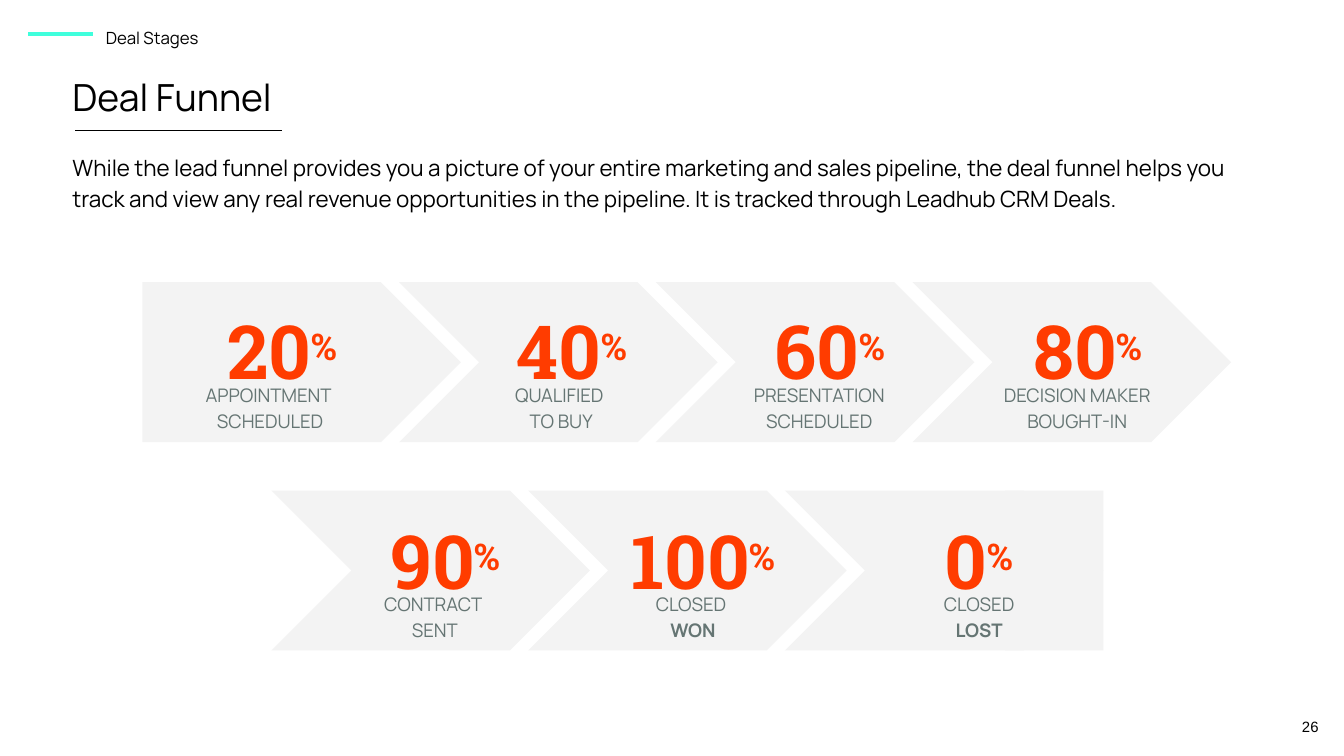
from pptx import Presentation
from pptx.dml.color import RGBColor
from pptx.enum.shapes import MSO_CONNECTOR, MSO_SHAPE
from pptx.enum.text import MSO_ANCHOR, PP_ALIGN
from pptx.oxml.ns import qn
from pptx.util import Inches, Pt
from lxml import etree

LEFT, CENTER, RIGHT = PP_ALIGN.LEFT, PP_ALIGN.CENTER, PP_ALIGN.RIGHT
TOP, MIDDLE = MSO_ANCHOR.TOP, MSO_ANCHOR.MIDDLE
PENTAGON, CHEVRON = MSO_SHAPE.PENTAGON, MSO_SHAPE.CHEVRON
RECTANGLE = MSO_SHAPE.RECTANGLE
STRAIGHT = MSO_CONNECTOR.STRAIGHT

rgb = RGBColor.from_string

# Widescreen slide, 16:9
prs = Presentation()
prs.slide_width = Inches(10)
prs.slide_height = Inches(10) * 9 // 16
slide = prs.slides.add_slide(prs.slide_layouts[6])


def add_text(left, top, width, height, text, size, color="000000",
             font="Manrope", align=LEFT, spacing=1.15, anchor=TOP):
    """Add a one-paragraph text box and return its paragraph."""
    frame = slide.shapes.add_textbox(
        Inches(left), Inches(top), Inches(width), Inches(height)).text_frame
    frame.word_wrap = True
    frame.vertical_anchor = anchor
    frame.margin_left = frame.margin_right = Inches(0.1)
    frame.margin_top = frame.margin_bottom = Inches(0.1)
    paragraph = frame.paragraphs[0]
    paragraph.text = text
    paragraph.alignment = align
    paragraph.line_spacing = spacing
    paragraph.font.size = Pt(size)
    paragraph.font.name = font
    paragraph.font.color.rgb = rgb(color)
    return paragraph


def add_block(kind, left, top, width, height):
    """Add a plain grey block of the funnel."""
    block = slide.shapes.add_shape(
        kind, Inches(left), Inches(top), Inches(width), Inches(height))
    block.shadow.inherit = False
    block.fill.solid()
    block.fill.fore_color.rgb = rgb("F3F3F3")
    block.line.fill.background()


# Header, title and introduction
add_text(0.69, 0.1, 4.03, 0.32, "Deal Stages", 9)
add_text(0.44, 0.45, 2.37, 0.43, "Deal Funnel", 20, spacing=1.0)
intro = add_text(
    0.44, 1.02, 8.93, 0.67,
    "While the lead funnel provides you a picture of your entire marketing "
    "and sales pipeline, the deal funnel helps you track and view any real "
    "revenue opportunities in the pipeline. It is tracked through Leadhub "
    "CRM Deals.", 12)
intro.space_after = Pt(16)

# Accent bar and title underline
for start, end, y, color, weight in [(0.21, 0.69, 0.25, "3FFFDC", 2.25),
                                     (0.56, 2.1, 0.97, "000000", 0.75)]:
    rule = slide.shapes.add_connector(
        STRAIGHT, Inches(start), Inches(y), Inches(end), Inches(y))
    rule.line.color.rgb = rgb(color)
    rule.line.width = Pt(weight)
    etree.SubElement(rule._element.spPr, qn("a:effectLst"))

# Rows: left, top, label top, stages
# Stages: kind, label left, label width, figure left, figure, label, outcome
rows = [
    (1.06, 2.1, 2.73, [
        (PENTAGON, 1.06, 1.9, 1.15, "20", "APPOINTMENT \vSCHEDULED", ""),
        (CHEVRON, 3.32, 1.71, 3.4, "40", "QUALIFIED \vTO BUY", ""),
        (CHEVRON, 5.24, 1.71, 5.32, "60", "PRESENTATION SCHEDULED", ""),
        (CHEVRON, 7.16, 1.71, 7.24, "80", "DECISION MAKER BOUGHT-IN", ""),
    ]),
    (2.02, 3.65, 4.29, [
        (CHEVRON, 2.38, 1.71, 2.46, "90", "CONTRACT \vSENT", ""),
        (CHEVRON, 4.3, 1.71, 4.38, "100", "CLOSED \v", "WON"),
        (CHEVRON, 6.43, 1.71, 6.43, "0", "CLOSED\v", "LOST"),
    ]),
]
STAGE_WIDTH, STAGE_HEIGHT, STAGE_STEP = 2.37, 1.19, 1.91

# Square end of the last stage
add_block(RECTANGLE, 7.48, 3.65, 0.73, STAGE_HEIGHT)

for row_left, row_top, label_top, stages in rows:
    for i, (kind, label_left, width, figure_left, figure, label,
            outcome) in enumerate(stages):
        add_block(kind, row_left + i * STAGE_STEP, row_top,
                  STAGE_WIDTH, STAGE_HEIGHT)

        caption = add_text(label_left, label_top, width, 0.43, label,
                           10, "657573", align=CENTER)
        if outcome:
            outcome_run = caption.add_run()
            outcome_run.text = outcome
            outcome_run.font.bold = True

        percentage = add_text(figure_left, label_top - 0.66, width, 0.67,
                              figure, 40, "FF3C00", "Roboto Slab", CENTER)
        percentage.font.bold = True
        percent_sign = percentage.add_run()
        percent_sign.text = "%"
        percent_sign.font.size = Pt(34)
        percent_sign.font._element.set("baseline", "30000")

# Page number
add_text(9.31, 5.19, 0.6, 0.43, "26", 8, font="Arial", align=RIGHT,
         spacing=1.0, anchor=MIDDLE)

prs.save("out.pptx")
